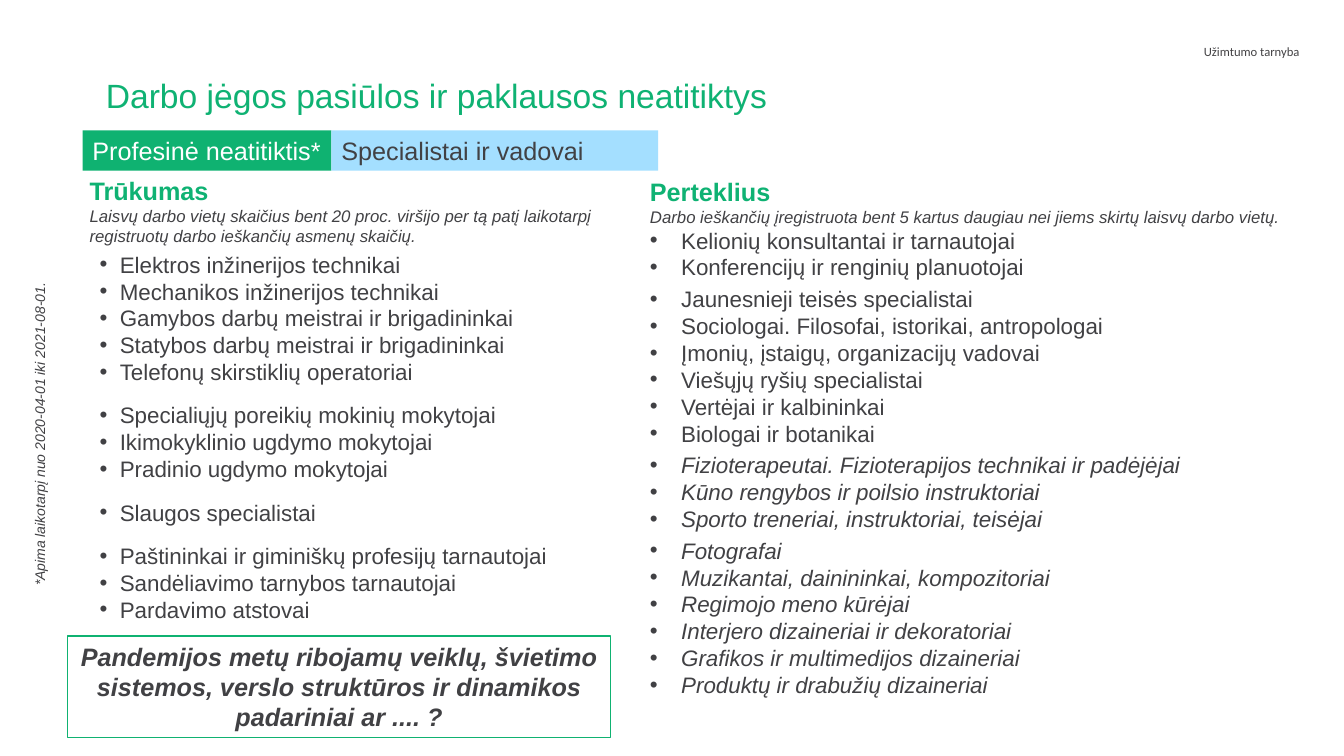
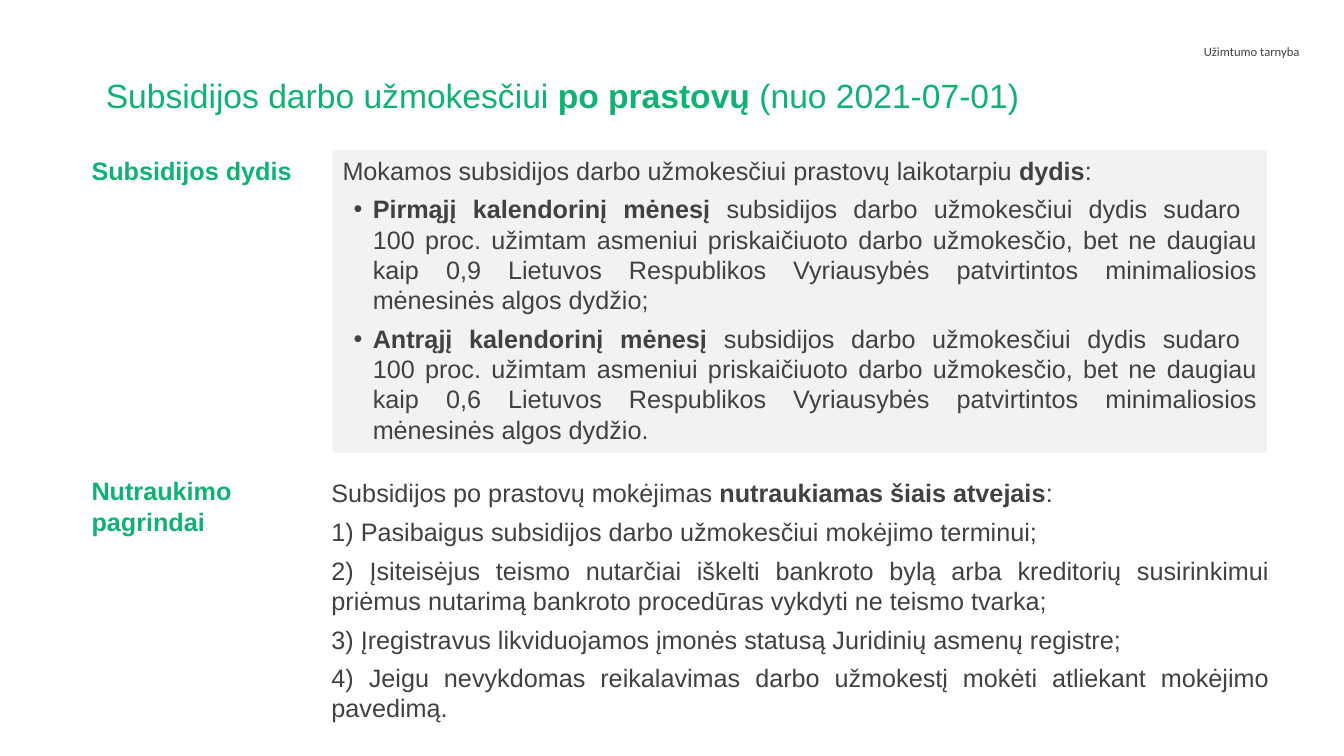
from lxml import etree
from pptx import Presentation
from pptx.dml.color import RGBColor
from pptx.enum.shapes import MSO_SHAPE
from pptx.enum.text import MSO_ANCHOR, MSO_AUTO_SIZE, PP_ALIGN
from pptx.oxml.ns import qn
from pptx.util import Pt

RECT = MSO_SHAPE.RECTANGLE
TOP = MSO_ANCHOR.TOP
NO_FIT = MSO_AUTO_SIZE.NONE
LEFT, CENTER, RIGHT, JUSTIFY = PP_ALIGN.LEFT, PP_ALIGN.CENTER, PP_ALIGN.RIGHT, PP_ALIGN.JUSTIFY

GREEN, TITLE_GREEN = "0FB271", "0FB273"
BLUE, GREY, WHITE = "A4DFFF", "F2F2F2", "FFFFFF"
INK, HEADER_INK = "414144", "434244"
TITLE_BOX = (68.4, 53.3, 823.7, 54)
HEADER_BOX = (611.3, 28, 324, 33.8)

SHORTAGE = [
    ["Elektros inžinerijos technikai", "Mechanikos inžinerijos technikai",
     "Gamybos darbų meistrai ir brigadininkai",
     "Statybos darbų meistrai ir brigadininkai", "Telefonų skirstiklių operatoriai"],
    ["Specialiųjų poreikių mokinių mokytojai", "Ikimokyklinio ugdymo mokytojai",
     "Pradinio ugdymo mokytojai"],
    ["Slaugos specialistai"],
    ["Paštininkai ir giminiškų profesijų tarnautojai",
     "Sandėliavimo tarnybos tarnautojai", "Pardavimo atstovai"],
]
SURPLUS = [
    ["Kelionių konsultantai ir tarnautojai", "Konferencijų ir renginių planuotojai"],
    ["Jaunesnieji teisės specialistai", "Sociologai. Filosofai, istorikai, antropologai",
     "Įmonių, įstaigų, organizacijų vadovai", "Viešųjų ryšių specialistai",
     "Vertėjai ir kalbininkai", "Biologai ir botanikai"],
    ["Fizioterapeutai. Fizioterapijos technikai ir padėjėjai",
     "Kūno rengybos ir poilsio instruktoriai", "Sporto treneriai, instruktoriai, teisėjai"],
    ["Fotografai", "Muzikantai, dainininkai, kompozitoriai", "Regimojo meno kūrėjai",
     "Interjero dizaineriai ir dekoratoriai", "Grafikos ir multimedijos dizaineriai",
     "Produktų ir drabužių dizaineriai"],
]
RATE = ("**{} kalendorinį mėnesį** subsidijos darbo užmokesčiui dydis sudaro \n"
        "100 proc. užimtam asmeniui priskaičiuoto darbo užmokesčio, bet ne daugiau kaip {} "
        "Lietuvos Respublikos Vyriausybės patvirtintos minimaliosios mėnesinės algos dydžio{}")
ENDINGS = [
    "Subsidijos po prastovų mokėjimas **nutraukiamas šiais atvejais**:",
    "1) Pasibaigus subsidijos darbo užmokesčiui mokėjimo terminui;",
    "2) Įsiteisėjus teismo nutarčiai iškelti bankroto bylą arba kreditorių susirinkimui "
    "priėmus nutarimą bankroto procedūras vykdyti ne teismo tvarka;",
    "3) Įregistravus likviduojamos įmonės statusą Juridinių asmenų registre;",
    "4) Jeigu nevykdomas reikalavimas darbo užmokestį mokėti atliekant mokėjimo pavedimą.",
]


def rgb(value):
    return RGBColor.from_string(value)


def write(tf, text, size=18, color=INK, bold=False, italic=False, font="Arial",
          align=LEFT, before=0, after=0, spacing=None, indent=0, hang=0, bullet=False):
    p = tf.paragraphs[0]
    if p.runs:
        p = tf.add_paragraph()
    pPr = p._p.get_or_add_pPr()
    pPr.set("marL", str(Pt(indent)))
    pPr.set("indent", str(-Pt(hang)))
    if bullet:
        etree.SubElement(pPr, qn("a:buFont")).set("typeface", "Arial")
        etree.SubElement(pPr, qn("a:buChar")).set("char", "•")
    else:
        etree.SubElement(pPr, qn("a:buNone"))
    p.alignment = align
    p.space_before, p.space_after = Pt(before), Pt(after)
    if spacing:
        p.line_spacing = spacing
    for i, part in enumerate(text.split("**")):
        for j, line in enumerate(part.split("\n")):
            if j:
                p.add_line_break()
            if not line:
                continue
            r = p.add_run()
            r.text = line
            r.font.size, r.font.name = Pt(size), font
            r.font.bold, r.font.italic = bold or i % 2 == 1, italic
            r.font.color.rgb = rgb(color)


def frame(sp):
    tf = sp.text_frame
    tf.word_wrap = True
    tf.auto_size = NO_FIT
    tf.vertical_anchor = TOP
    tf.margin_left = tf.margin_right = Pt(7.2)
    tf.margin_top = tf.margin_bottom = Pt(3.6)
    return tf


def text_box(s, box):
    return frame(s.shapes.add_textbox(*map(Pt, box)))


def panel(s, box, fill=None, line=None):
    sp = s.shapes.add_shape(RECT, *map(Pt, box))
    sp.shadow.inherit = False
    if fill:
        sp.fill.solid()
        sp.fill.fore_color.rgb = rgb(fill)
    else:
        sp.fill.background()
    if line:
        sp.line.color.rgb = rgb(line)
        sp.line.width = Pt(1)
    else:
        sp.line.fill.background()
    return frame(sp)


def titled_slide(prs, title):
    s = prs.slides.add_slide(prs.slide_layouts[5])
    sp = s.shapes.title
    sp.left, sp.top, sp.width, sp.height = map(Pt, TITLE_BOX)
    write(frame(sp), title, size=24, color=TITLE_GREEN, spacing=0.9)
    write(text_box(s, HEADER_BOX), "Užimtumo tarnyba", size=9, color=HEADER_INK,
          font="Calibri", align=RIGHT)
    return s


def column(s, box, heading, note, groups, head_indent, indent, hang, lead, gap, italic_from):
    tf = text_box(s, box)
    write(tf, heading, color=TITLE_GREEN, bold=True, indent=head_indent)
    write(tf, note, size=12, italic=True, indent=head_indent)
    for g, group in enumerate(groups):
        for i, item in enumerate(group):
            before = 0 if i else (gap if g else lead)
            write(tf, item, size=16, italic=g >= italic_from, before=before,
                  indent=indent, hang=hang, bullet=True)


def tag_band(s, box, tag, topic):
    x, y, w, h = box
    tag_w = 177.8
    write(panel(s, (x, y, tag_w, h), GREEN), tag, color=WHITE)
    write(panel(s, (x + tag_w, y, w - tag_w, h), BLUE), topic)


def side_note(s, box, text):
    tf = text_box(s, box)
    tf._txBody.bodyPr.set("vert", "vert270")
    write(tf, text, size=10, italic=True, align=CENTER)


def section(s, box, label, body_x, fill, drop=0):
    x, y, w, h = box
    write(text_box(s, (x, y, 195.8, 51)), label, color=TITLE_GREEN, bold=True)
    return panel(s, (x + body_x, y + drop, w - body_x, h), fill)


def mismatch_slide(prs):
    s = titled_slide(prs, "Darbo jėgos pasiūlos ir paklausos neatitiktys")
    column(s, (50.4, 121.7, 411.8, 358.6), "Trūkumas",
           "Laisvų darbo vietų skaičius bent 20 proc. viršijo per tą patį laikotarpį "
           "registruotų darbo ieškančių asmenų skaičių.",
           SHORTAGE, 6.5, 28.1, 14.4, 3.5, 11.8, len(SHORTAGE))
    column(s, (457.2, 122.4, 484.6, 383.8), "Perteklius",
           "Darbo ieškančių įregistruota bent 5 kartus daugiau nei jiems skirtų laisvų "
           "darbo vietų.", SURPLUS, 0, 22.3, 22.3, 0, 3.5, 2)
    tag_band(s, (59, 93.2, 411.2, 28.8), "Profesinė neatitiktis*", "Specialistai ir vadovai")
    side_note(s, (18.7, 172.8, 26.6, 275), "*Apima laikotarpį nuo 2020-04-01 iki 2021-08-01.")
    write(panel(s, (48.2, 454.3, 388.1, 72.7), line=GREEN),
          "Pandemijos metų ribojamų veiklų, švietimo sistemos, verslo struktūros ir "
          "dinamikos padariniai ar .... ?", bold=True, italic=True, align=CENTER)


def subsidy_slide(prs):
    s = titled_slide(prs, "Subsidijos darbo užmokesčiui **po prastovų **(nuo 2021-07-01)")
    tf = section(s, (58.3, 107.3, 846.7, 216), "Subsidijos dydis", 179.3, GREY)
    write(tf, "Mokamos subsidijos darbo užmokesčiui prastovų laikotarpiu **dydis**:",
          align=JUSTIFY, after=6)
    for month, share, end in (("Pirmąjį", "0,9", ";"), ("Antrąjį", "0,6", ".")):
        write(tf, RATE.format(month, share, end), align=JUSTIFY, after=6,
              indent=21.6, hang=13.7, bullet=True)
    tf = section(s, (58.3, 336.2, 855.4, 184.3), "Nutraukimo pagrindai", 171.4, WHITE, drop=1.5)
    for text in ENDINGS:
        write(tf, text, align=JUSTIFY, after=6)


def main():
    prs = Presentation()
    prs.slide_width, prs.slide_height = Pt(960), Pt(540)
    mismatch_slide(prs)
    subsidy_slide(prs)
    prs.save("out.pptx")


if __name__ == "__main__":
    main()
